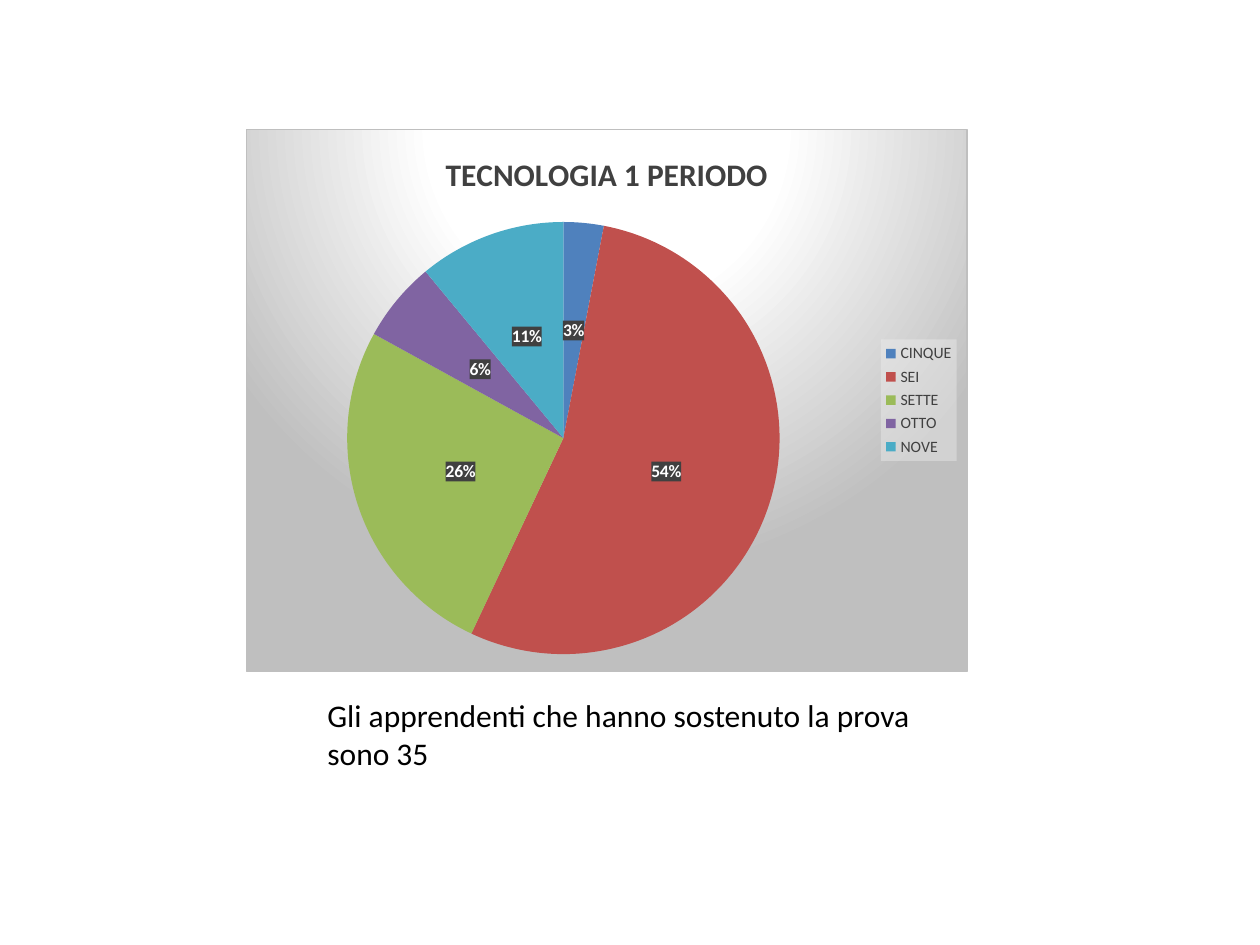
from lxml import etree
from pptx import Presentation
from pptx import util as u
from pptx.chart.data import CategoryChartData
from pptx.dml.color import RGBColor
from pptx.enum import chart as ch, text
from pptx.oxml import parse_xml
from pptx.oxml.ns import nsdecls, qn

W, H = 10, 7.5
FONT = "Calibri"
COLORS = {"text": "000000", "dark": "404040", "white": "FFFFFF", "grey": "BFBFBF",
          "legend": "F2F2F2"}
# Grade: (share of learners in percent, slice colour)
GRADES = {"CINQUE": (3, "4F81BD"), "SEI": (54, "C0504D"), "SETTE": (26, "9BBB59"),
          "OTTO": (6, "8064A2"), "NOVE": (11, "4BACC6")}


def box(x, y, w, h):
    """Turn shares of the slide into lengths."""
    return [u.Inches(v) for v in (x * W, y * H, w * W, h * H)]


def set_font(font, size, color="text", bold=False):
    font.name, font.size, font.bold = FONT, u.Pt(size), bold
    font.color.rgb = RGBColor.from_string(COLORS[color])


def write(tf, content, **fmt):
    r = tf.paragraphs[0].add_run()
    r.text = content
    set_font(r.font, **fmt)


def sp_pr(inner):
    return parse_xml(f"<c:spPr {nsdecls('c', 'a')}>{inner}</c:spPr>")


def solid(color, alpha):
    return sp_pr(f'<a:solidFill><a:srgbClr val="{COLORS[color]}">'
                 f'<a:alpha val="{alpha * 1000}"/></a:srgbClr></a:solidFill>')


def add_background(chart):
    """Radial gradient and thin border for the chart area."""
    stops = "".join(f'<a:gs pos="{pos * 1000}"><a:srgbClr val="{COLORS[c]}"/></a:gs>'
                    for pos, c in ((0, "white"), (39, "white"), (100, "grey")))
    chart.element.find(qn("c:chart")).addnext(sp_pr(
        f'<a:gradFill><a:gsLst>{stops}</a:gsLst><a:path path="circle">'
        '<a:fillToRect l="50000" t="-80000" r="50000" b="180000"/></a:path></a:gradFill>'
        f'<a:ln w="9525"><a:solidFill><a:srgbClr val="{COLORS["grey"]}"/>'
        '</a:solidFill></a:ln>'))


def place_plot(chart, **shares):
    """Fix the pie's place as shares of the chart area."""
    area = chart.element.find(qn("c:chart")).find(qn("c:plotArea"))
    old = area.find(qn("c:layout"))
    if old is not None:
        area.remove(old)
    layout = parse_xml(f"<c:layout {nsdecls('c')}><c:manualLayout/></c:layout>")
    settings = {"layoutTarget": "inner", "xMode": "edge", "yMode": "edge", **shares}
    for tag, val in settings.items():
        etree.SubElement(layout[0], qn(f"c:{tag}")).set("val", str(val))
    area.insert(0, layout)


def add_pie(s, title, grades, place):
    data = CategoryChartData()
    data.categories = list(grades)
    data.add_series("Series 1", [share for share, _ in grades.values()])
    chart = s.shapes.add_chart(ch.XL_CHART_TYPE.PIE, *place, data).chart
    set_font(chart.font, 10)
    add_background(chart)
    place_plot(chart, x=0.14, y=0.17, w=0.6, h=0.8)

    # Title and legend
    chart.has_title = True
    write(chart.chart_title.text_frame, title, size=18, color="dark", bold=True)
    chart.chart_title.include_in_layout = False
    chart.has_legend = True
    legend = chart.legend
    legend.position = ch.XL_LEGEND_POSITION.RIGHT
    legend.include_in_layout = False
    set_font(legend.font, 9, "dark")
    legend.font._element.getparent().getparent().getparent().addprevious(
        solid("legend", 39))

    # Slices and their labels
    plot = chart.plots[0]
    plot.vary_by_categories = True
    series = plot.series[0]
    for i, (_, color) in enumerate(grades.values()):
        fill = series.points[i].format.fill
        fill.solid()
        fill.fore_color.rgb = RGBColor.from_string(color)
    labels = series.data_labels
    labels.show_percentage, labels.show_value = True, False
    labels.number_format, labels.number_format_is_linked = "0%", False
    labels.position = ch.XL_LABEL_POSITION.CENTER
    set_font(labels.font, 10, "white", bold=True)
    labels._element.find(qn("c:txPr")).addprevious(solid("dark", 75))


def add_caption(s, content, place):
    tf = s.shapes.add_textbox(*place).text_frame
    tf.word_wrap = True
    tf.auto_size = text.MSO_AUTO_SIZE.SHAPE_TO_FIT_TEXT
    write(tf, content, size=18)


def main():
    prs = Presentation()
    prs.slide_width, prs.slide_height = u.Inches(W), u.Inches(H)
    s = prs.slides.add_slide(prs.slide_layouts[6])
    add_pie(s, "TECNOLOGIA 1 PERIODO", GRADES, box(0.195, 0.136, 0.573, 0.575))
    add_caption(s, "Gli apprendenti che hanno sostenuto la prova sono 35",
                box(0.25, 0.73, 0.5, 0.094))
    prs.save("out.pptx")


if __name__ == "__main__":
    main()
